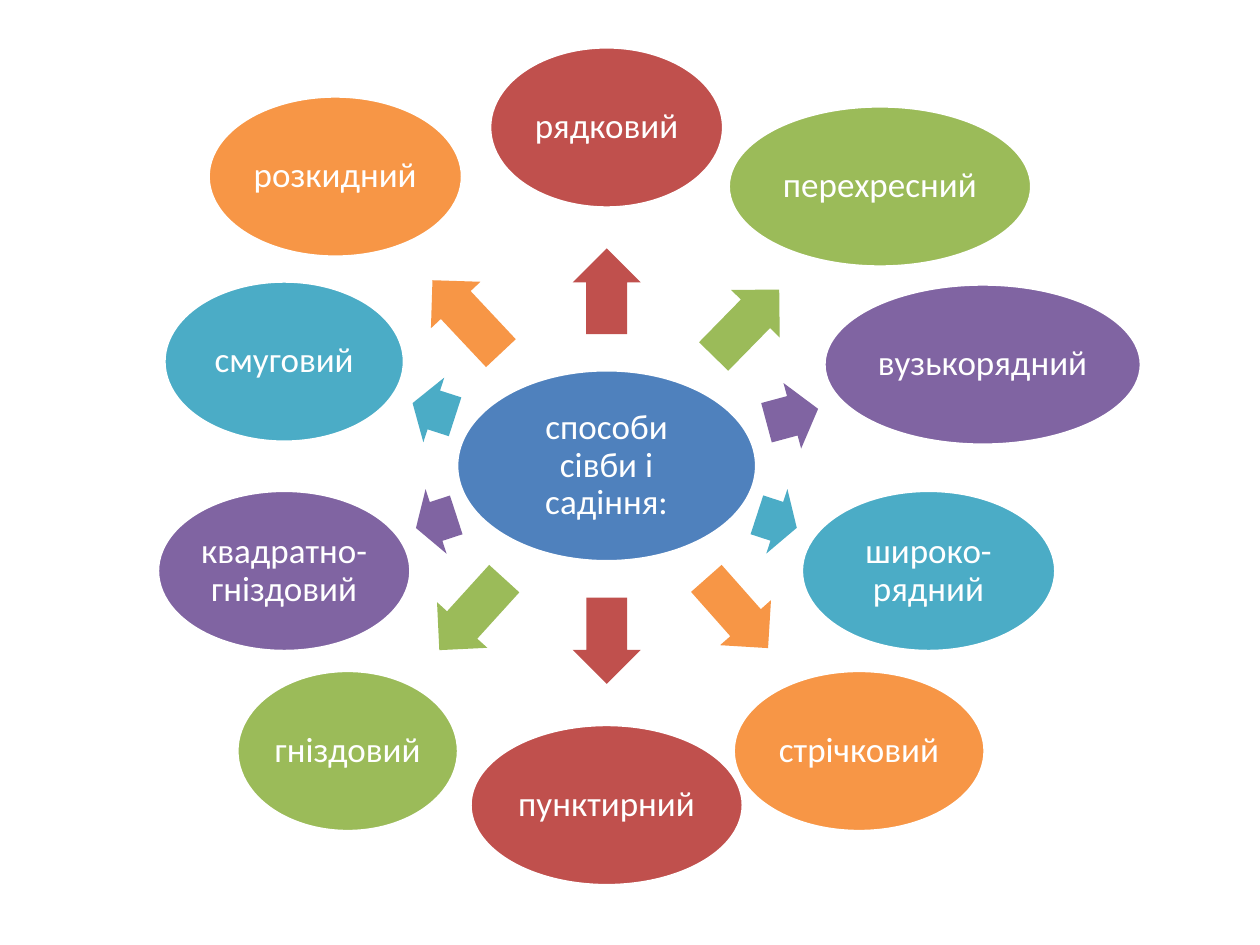
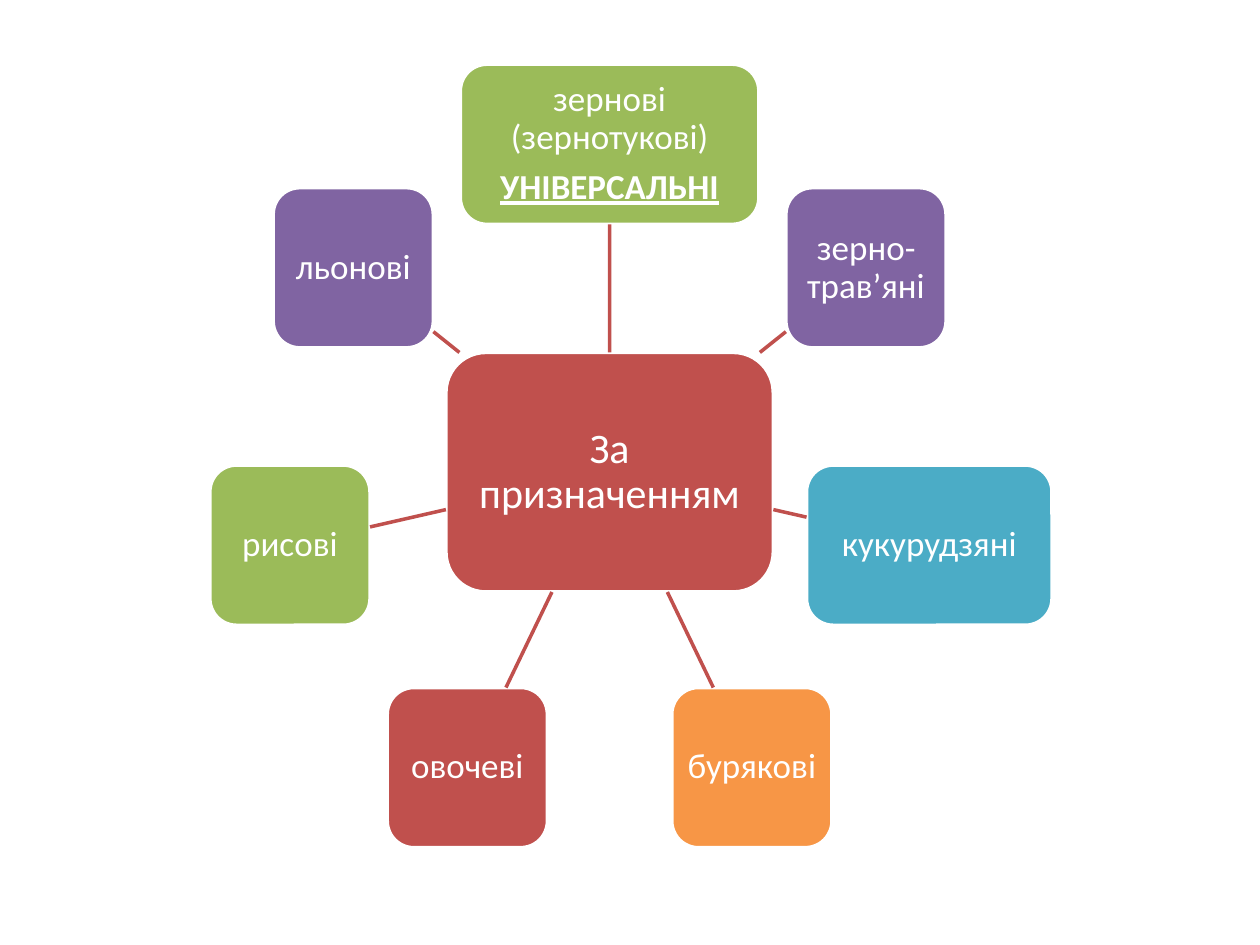
from dataclasses import dataclass
from math import atan2, cos, degrees, hypot, pi, sin

from lxml.etree import SubElement
from pptx import Presentation
from pptx.dml.color import RGBColor
from pptx.enum.shapes import MSO_CONNECTOR as Connector, MSO_SHAPE as Preset
from pptx.enum.text import MSO_ANCHOR as Anchor, PP_ALIGN as Align
from pptx.oxml.ns import qn
from pptx.shapes.autoshape import Shape
from pptx.slide import Slide
from pptx.util import Cm, Pt


# Shared look
@dataclass(frozen=True)
class Theme:
    font: str = "Calibri"
    body_size: int = 20
    hub_size: int = 24
    line_width: int = 2
    line_spacing: float = 0.9
    paragraph_gap: float = 0.35
    white: str = "FFFFFF"
    blue: str = "4F81BD"
    red: str = "C0504D"
    green: str = "9BBB59"
    purple: str = "8064A2"
    teal: str = "4BACC6"
    orange: str = "F79646"


THEME = Theme()


@dataclass(frozen=True)
class Node:
    """A labelled shape given by its centre and size in centimetres."""
    text: str
    x: float
    y: float
    width: float
    height: float
    color: str
    size: int = THEME.body_size
    inset: float = 0.08


# Slide 1: ways of sowing around an ellipse
OVAL_HEIGHT = 3.25
ARROW_HEIGHT = 1.37
ARROW_SHARE = 0.53      # part of the gap that an arrow fills
ARROW_CENTRE = 0.486    # place of its middle within the gap

SOWING_HUB = Node("способи\vсівби і\vсадіння:", 12.23, 9.39, 6.05, 3.87, THEME.blue)
SOWING_WAYS = [
    Node(text, x, y, width, OVAL_HEIGHT, color)
    for text, x, y, width, color in [
        ("рядковий", 12.23, 2.57, 4.72, THEME.red),
        ("перехресний", 17.74, 3.76, 6.12, THEME.green),
        ("вузькорядний", 19.81, 7.35, 6.4, THEME.purple),
        ("широко-рядний", 18.72, 11.51, 5.13, THEME.teal),
        ("стрічковий", 17.32, 15.14, 5.08, THEME.orange),
        ("пунктирний", 12.23, 16.23, 5.51, THEME.red),
        ("гніздовий", 7.01, 15.14, 4.47, THEME.green),
        ("квадратно-гніздовий", 5.73, 11.51, 5.11, THEME.purple),
        ("смуговий", 5.73, 7.29, 4.85, THEME.teal),
        ("розкидний", 6.76, 3.56, 5.13, THEME.orange),
    ]
]

# Slide 2: kinds by purpose, evenly spaced on a circle
RING_RADIUS = 6.61
CARD_SIDE = 3.23
CARD_INSET = 0.16

PURPOSE_HUB = Node("За\vпризначенням", 12.29, 9.52, 6.6, 4.83, THEME.red,
                   THEME.hub_size, 0.18)
PURPOSES = [
    ("зернові (зернотукові)\nУНІВЕРСАЛЬНІ", 6.02, THEME.green),
    ("зерно-трав’яні", CARD_SIDE, THEME.purple),
    ("кукурудзяні", 4.95, THEME.teal),
    ("бурякові", CARD_SIDE, THEME.orange),
    ("овочеві", CARD_SIDE, THEME.red),
    ("рисові", CARD_SIDE, THEME.green),
    ("льонові", CARD_SIDE, THEME.purple),
]


# Drawing
def add_filled(page: Slide, preset: Preset, x: float, y: float,
               width: float, height: float, color: str) -> Shape:
    """Add a flat filled shape centred on x, y."""
    shape = page.shapes.add_shape(preset, Cm(x - width / 2), Cm(y - height / 2),
                                  Cm(width), Cm(height))
    shape.shadow.inherit = False
    shape.fill.solid()
    shape.fill.fore_color.rgb = RGBColor.from_string(color)
    return shape


def add_node(page: Slide, preset: Preset, node: Node) -> Shape:
    box = add_filled(page, preset, node.x, node.y, node.width, node.height, node.color)
    box.line.color.rgb = RGBColor.from_string(THEME.white)
    box.line.width = Pt(THEME.line_width)

    frame = box.text_frame
    frame.word_wrap = True
    frame.vertical_anchor = Anchor.MIDDLE
    frame.margin_left = frame.margin_right = Cm(node.inset)
    frame.margin_top = frame.margin_bottom = Cm(node.inset)
    frame.text = node.text
    for para in frame.paragraphs:
        para.alignment = Align.CENTER
        para.line_spacing = THEME.line_spacing
        para.space_after = Pt(node.size * THEME.paragraph_gap)
        for span in para.runs:
            span.font.name = THEME.font
            span.font.size = Pt(node.size)
            span.font.color.rgb = RGBColor.from_string(THEME.white)
    return box


def oval_reach(node: Node, angle: float) -> float:
    """Distance from an ellipse's centre to its edge."""
    return 1 / hypot(cos(angle) * 2 / node.width, sin(angle) * 2 / node.height)


def box_reach(node: Node, angle: float) -> float:
    """Distance from a rectangle's centre to its edge."""
    return 0.5 / max(abs(cos(angle)) / node.width, abs(sin(angle)) / node.height)


def add_arrow(page: Slide, hub: Node, node: Node) -> None:
    """Place a block arrow in the gap between two ellipses."""
    across, down = node.x - hub.x, node.y - hub.y
    angle = atan2(down, across)
    start = oval_reach(hub, angle)
    gap = hypot(across, down) - start - oval_reach(node, angle)
    middle = start + gap * ARROW_CENTRE
    arrow = add_filled(page, Preset.RIGHT_ARROW,
                       hub.x + middle * cos(angle), hub.y + middle * sin(angle),
                       gap * ARROW_SHARE, ARROW_HEIGHT, node.color)
    arrow.adjustments[0] = 0.6
    arrow.adjustments[1] = 0.5
    arrow.rotation = degrees(angle) % 360
    arrow.line.fill.background()


def add_spoke(page: Slide, hub: Node, node: Node, hub_box: Shape, node_box: Shape) -> None:
    """Draw a line from the hub's edge to the node's edge."""
    across, down = node.x - hub.x, node.y - hub.y
    angle = atan2(down, across)
    start = box_reach(hub, angle)
    end = hypot(across, down) - box_reach(node, angle)
    spoke = page.shapes.add_connector(
        Connector.STRAIGHT,
        Cm(hub.x + start * cos(angle)), Cm(hub.y + start * sin(angle)),
        Cm(hub.x + end * cos(angle)), Cm(hub.y + end * sin(angle)))
    spoke.line.color.rgb = RGBColor.from_string(THEME.red)
    spoke.line.width = Pt(THEME.line_width)
    SubElement(spoke._element.spPr, qn("a:effectLst"))
    if abs(across) < 0.01:  # straight up: joins the middles of both sides
        spoke.begin_connect(hub_box, 0)
        spoke.end_connect(node_box, 2)


# Slides
def build_sowing(page: Slide) -> None:
    add_node(page, Preset.OVAL, SOWING_HUB)
    for way in SOWING_WAYS:
        add_arrow(page, SOWING_HUB, way)
        add_node(page, Preset.OVAL, way)


def build_purposes(page: Slide) -> None:
    hub = PURPOSE_HUB
    hub_box = add_node(page, Preset.ROUNDED_RECTANGLE, hub)
    for index, (text, width, color) in enumerate(PURPOSES):
        angle = 2 * pi * index / len(PURPOSES) - pi / 2
        card = Node(text, hub.x + RING_RADIUS * cos(angle), hub.y + RING_RADIUS * sin(angle),
                    width, CARD_SIDE, color, inset=CARD_INSET)
        card_box = add_node(page, Preset.ROUNDED_RECTANGLE, card)
        add_spoke(page, hub, card, hub_box, card_box)
        # A second paragraph is an emphasised label
        for para in card_box.text_frame.paragraphs[1:]:
            for span in para.runs:
                span.font.bold = True
                span.font.underline = True


def main() -> None:
    deck = Presentation()
    deck.slide_width, deck.slide_height = Cm(25.4), Cm(19.05)
    blank = deck.slide_layouts[6]
    for build in (build_sowing, build_purposes):
        build(deck.slides.add_slide(blank))
    deck.save("out.pptx")


if __name__ == "__main__":
    main()
